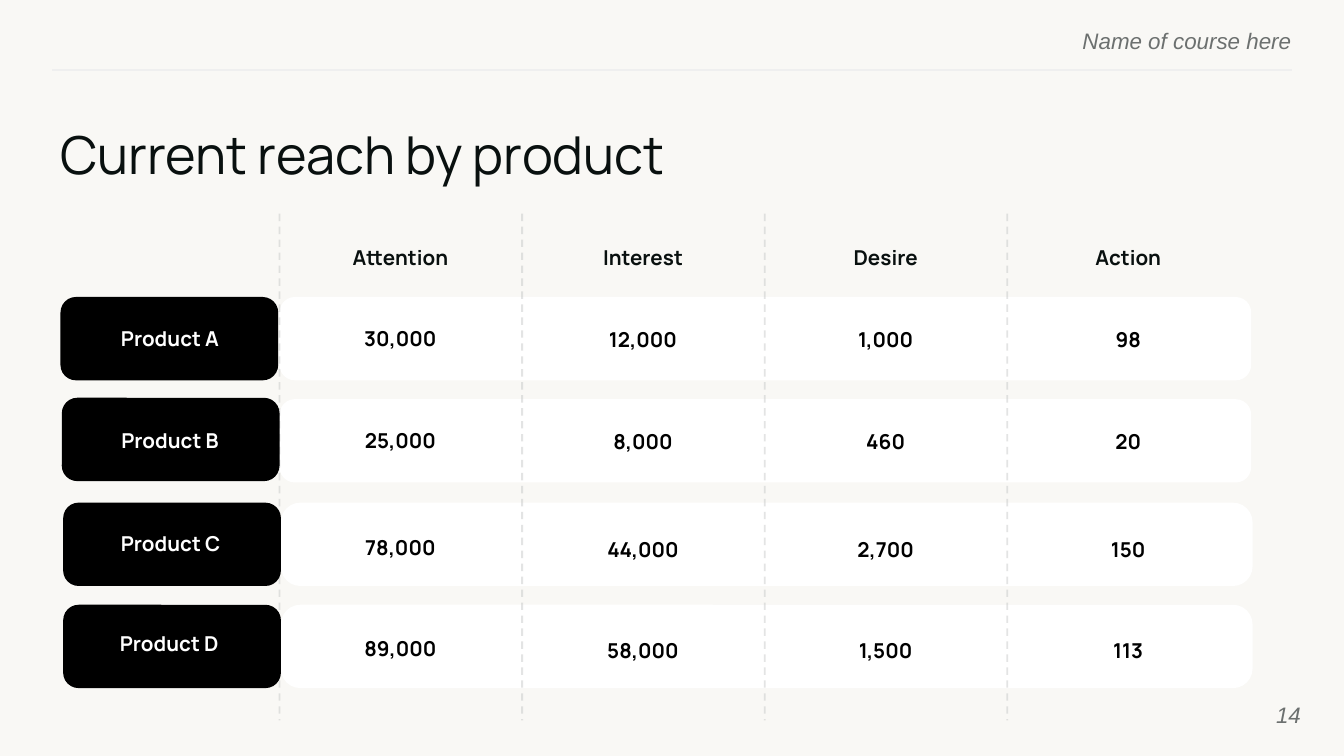
from lxml.etree import SubElement
from pptx import Presentation
from pptx.dml.color import RGBColor
from pptx.enum.dml import MSO_LINE
from pptx.enum.shapes import MSO_CONNECTOR, MSO_SHAPE
from pptx.enum.text import MSO_ANCHOR, PP_ALIGN
from pptx.oxml.ns import qn
from pptx.util import Emu, Pt

PX = 4572
COLORS = {
    "background": "F9F8F5",
    "rule": "EFEFEF",
    "divider": "B5B7B7",
    "muted": "6C706F",
    "ink": "09100F",
    "black": "000000",
    "white": "FFFFFF",
}
STAGES = ["Attention", "Interest", "Desire", "Action"]
PRODUCTS = [
    ("Product A", ["30,000", "12,000", "1,000", "98"]),
    ("Product B", ["25,000", "8,000", "460", "20"]),
    ("Product C", ["78,000", "44,000", "2,700", "150"]),
    ("Product D", ["89,000", "58,000", "1,500", "113"]),
]
ROWS = [
    {"bar": (326, 152), "pill": (0, 152), "label": (54, 188, 218), "value": 188, "round": 0.186},
    {"bar": (326, 304), "pill": (2, 302), "label": (58, 340, 210), "value": 340, "round": 0.186},
    {"bar": (328, 458), "pill": (4, 458), "label": (44, 494, 240), "value": 500, "round": 0.234},
    {"bar": (328, 610), "pill": (4, 610), "label": (42, 642, 240), "value": 650, "round": 0.234},
]
FIRST_COL, COL_STEP, CELL_W, CELL_H = 326, 361, 360, 50
BAR_W, PILL_W, ROW_H = 1446, 324, 124


def emu(*lengths):
    return [Emu(n * PX) for n in lengths]


def rgb(name):
    return RGBColor.from_string(COLORS[name])


def add_text(s, box, text, size, color, font="Manrope", bold=False, italic=False,
             align=PP_ALIGN.LEFT, anchor=MSO_ANCHOR.TOP, inset=0, after=0):
    sp = s.shapes.add_textbox(*emu(*box))
    tf = sp.text_frame
    tf.word_wrap = True
    tf.vertical_anchor = anchor
    tf.margin_left, tf.margin_top, tf.margin_right, tf.margin_bottom = emu(*[inset] * 4)
    p = tf.paragraphs[0]
    p.alignment = align
    p.space_after = Pt(after)
    r = p.add_run()
    r.text = text
    r.font.size = Pt(size)
    r.font.name = font
    r.font.bold = bold
    r.font.italic = italic
    r.font.color.rgb = rgb(color)
    return sp


def add_cell(s, box, text, color):
    return add_text(s, box, text, 11, color, bold=True, align=PP_ALIGN.CENTER,
                    anchor=MSO_ANCHOR.MIDDLE, inset=4)


def add_note(s, box, text, anchor):
    return add_text(s, box, text, 12, "muted", font="Arial", italic=True,
                    align=PP_ALIGN.RIGHT, anchor=anchor)


def add_rounded(s, box, color, radius):
    sp = s.shapes.add_shape(MSO_SHAPE.ROUNDED_RECTANGLE, *emu(*box))
    sp.adjustments[0] = radius
    sp.shadow.inherit = False
    sp.fill.solid()
    sp.fill.fore_color.rgb = rgb(color)
    sp.line.fill.background()


def add_line(s, ends, color, width):
    cxn = s.shapes.add_connector(MSO_CONNECTOR.STRAIGHT, *emu(*ends))
    cxn.line.color.rgb = rgb(color)
    cxn.line.width = Pt(width)
    SubElement(cxn._element.spPr, qn("a:effectLst"))
    return cxn


def add_header(s, x, y, w, h):
    add_note(s, (x + w - 770, y, 770, 36), "Name of course here", MSO_ANCHOR.TOP)
    add_line(s, (x + w, y + h, x, y + h), "rule", 0.75)


def add_divider(s, x, y, h):
    cxn = add_line(s, (x, y, x, y + h), "divider", 1)
    cxn.line.dash_style = MSO_LINE.DASH
    color = cxn._element.spPr.find(".//" + qn("a:srgbClr"))
    SubElement(color, qn("a:alpha"), val="36000")


def add_reach_grid(s, x, y, h):
    columns = [x + FIRST_COL + i * COL_STEP for i in range(len(STAGES))]
    for row in ROWS:
        left, top = row["bar"]
        add_rounded(s, (x + left, y + top, BAR_W, ROW_H), "white", row["round"])
    for left, stage in zip(columns, STAGES):
        add_divider(s, left, y + 28, h)
        add_cell(s, (left, y + 68, CELL_W, CELL_H), stage, "ink")
    for row, (product, values) in zip(ROWS, PRODUCTS):
        left, top = row["pill"]
        add_rounded(s, (x + left, y + top, PILL_W, ROW_H), "black", 0.186)
        left, top, width = row["label"]
        add_cell(s, (x + left, y + top, width, CELL_H), product, "white")
        for i, (left, value) in enumerate(zip(columns, values)):
            top = row["value"] + (2 if i else 0)
            add_cell(s, (left, y + top, CELL_W, CELL_H), value, "black")


def main():
    prs = Presentation()
    prs.slide_width, prs.slide_height = emu(2000, 1125)
    s = prs.slides.add_slide(prs.slide_layouts[6])
    s.background.fill.solid()
    s.background.fill.fore_color.rgb = rgb("background")
    add_header(s, 78, 40, 1844, 64)
    add_text(s, (90, 182, 1846, 102), "Current reach by product", 28, "ink", after=10)
    add_reach_grid(s, 90, 290, 754)
    add_note(s, (1816, 1020, 120, 86), "14", MSO_ANCHOR.MIDDLE)
    prs.save("out.pptx")


if __name__ == "__main__":
    main()
